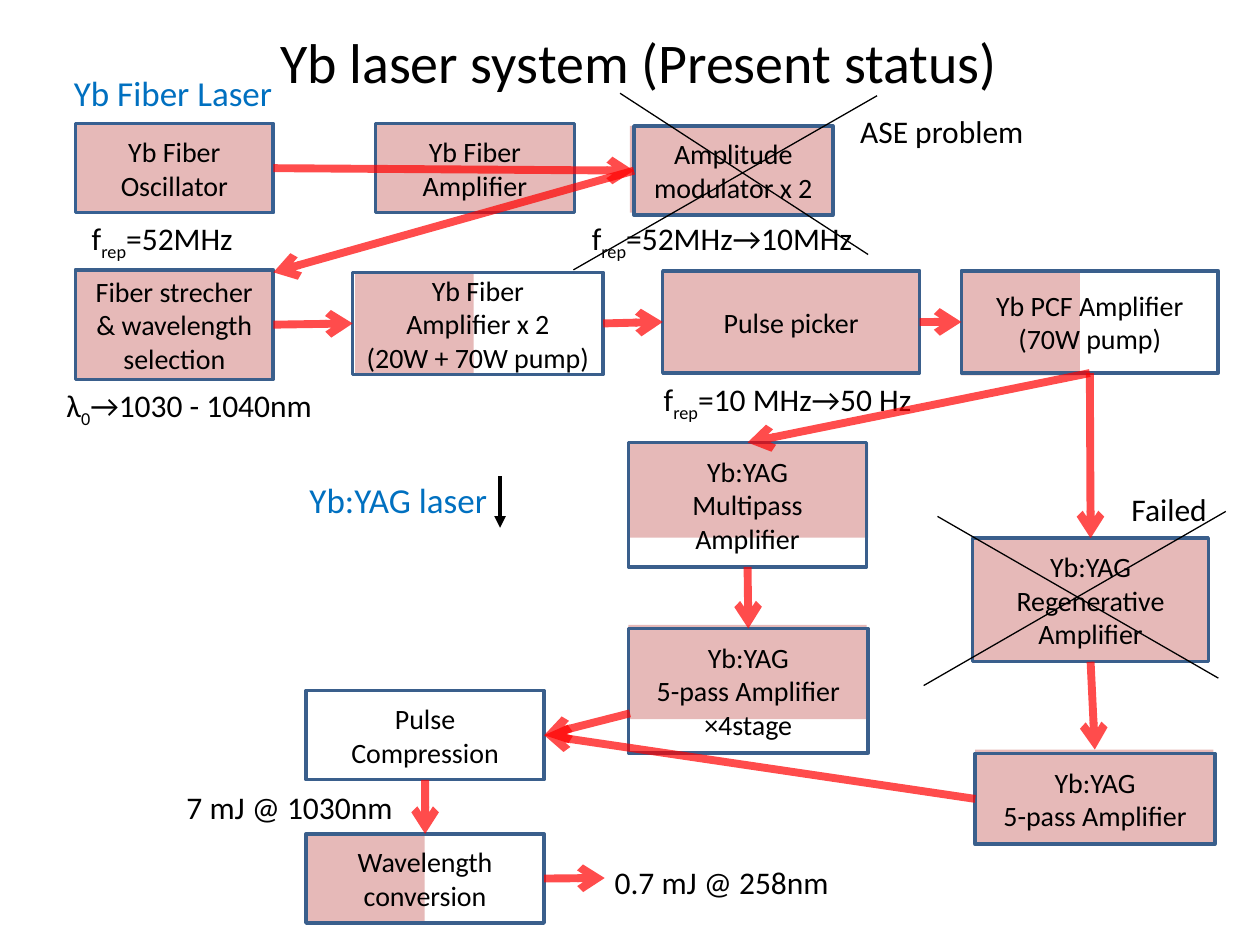
from dataclasses import dataclass

from lxml import etree
from pptx import Presentation
from pptx.dml.color import RGBColor
from pptx.enum import shapes, text
from pptx.oxml import ns
from pptx.util import Cm, Pt

FONT = "Calibri"
BLACK, BLUE, RED, PINK, OUTLINE = "000000", "0070C0", "FF0000", "E6B9B8", "3A5F8C"
TOP, LEFT, BOTTOM, RIGHT = range(4)


@dataclass(frozen=True)
class Area:
    """A place on the slide, in centimetres."""
    left: float
    top: float
    width: float
    height: float

    def lengths(self) -> tuple:
        return tuple(Cm(v) for v in (self.left, self.top, self.width, self.height))


@dataclass(frozen=True)
class Stage:
    area: Area
    lines: str
    fill: str | None = None
    outline: str = OUTLINE


@dataclass(frozen=True)
class Label:
    """A caption whose every second piece is a subscript."""
    area: Area
    pieces: tuple
    size: float = 18
    color: str = BLACK
    wrap: bool = True
    centred: bool = False


@dataclass(frozen=True)
class Pen:
    color: str
    width: float
    head: str | None = None
    opacity: int = 100


@dataclass(frozen=True)
class Link:
    """A line whose ends are (stage name, side) or a point in centimetres."""
    start: tuple
    end: tuple
    pen: Pen


BEAM = Pen(RED, 4.5, "arrow", 70)
CROSS = Pen(BLACK, 0.75)
FLOW = Pen(BLACK, 2.25, "triangle")

# Finished share of the stages that are only partly filled
PROGRESS = [
    Area(19.38, 5.46, 2.39, 2.11),
    Area(7.16, 5.49, 2.39, 2.03),
    Area(6.17, 16.81, 2.39, 1.78),
    Area(12.7, 2.54, 2.06, 1.75),
    Area(12.67, 12.6, 4.8, 1.9),
    Area(12.7, 8.94, 4.8, 1.9),
    Area(19.66, 15.11, 4.8, 1.9),
]

STAGES = {
    "oscillator": Stage(Area(1.52, 2.49, 3.99, 1.8), "Yb Fiber\nOscillator", PINK, "376092"),
    "amplifier": Stage(Area(7.57, 2.49, 4.01, 1.8), "Yb Fiber Amplifier", PINK),
    "modulator": Stage(Area(12.78, 2.54, 4.01, 1.8), "Amplitude modulator x 2", PINK),
    "stretcher": Stage(Area(1.52, 5.44, 3.99, 2.21),
                       "Fiber strecher\n& wavelength selection", PINK),
    "double amplifier": Stage(Area(7.11, 5.49, 5.05, 2.06),
                              "Yb Fiber\nAmplifier x 2\n(20W + 70W pump)"),
    "picker": Stage(Area(13.36, 5.46, 5.18, 2.06), "Pulse picker", PINK),
    "pcf": Stage(Area(19.38, 5.46, 5.18, 2.06), "Yb PCF Amplifier\n(70W pump)"),
    "multipass": Stage(Area(12.67, 8.92, 4.8, 2.51), "Yb:YAG\nMultipass\nAmplifier"),
    "regenerative": Stage(Area(19.61, 10.85, 4.75, 2.49),
                          "Yb:YAG\nRegenerative\nAmplifier", PINK),
    "four stage": Stage(Area(12.67, 12.67, 4.83, 2.51), "Yb:YAG\n5-pass Amplifier ×4stage"),
    "five pass": Stage(Area(19.66, 15.19, 4.83, 1.83), "Yb:YAG\n5-pass Amplifier"),
    "compression": Stage(Area(6.17, 13.92, 4.8, 1.8), "Pulse\nCompression"),
    "conversion": Stage(Area(6.17, 16.81, 4.8, 1.8), "Wavelength\nconversion"),
}

LABELS = [
    Label(Area(1.45, 0.33, 22.86, 1.8), ("Yb laser system (Present status)",), 32, centred=True),
    Label(Area(1.24, 1.32, 7.47, 1.12), ("Yb Fiber Laser",), 20, BLUE),
    Label(Area(5.99, 9.53, 5.84, 1.12), ("Yb:YAG laser",), 20, BLUE),
    Label(Area(1.6, 4.29, 3.71, 1.02), ("f", "rep", "=52MHz")),
    Label(Area(11.68, 4.29, 6.6, 1.02), ("f", "rep", "=52MHz→10MHz")),
    Label(Area(13.13, 7.54, 6.6, 1.02), ("f", "rep", "=10 MHz→50 Hz")),
    Label(Area(1.09, 7.65, 5.99, 1.02), ("λ", "0", "→1030 - 1040nm")),
    Label(Area(17.09, 2.13, 3.84, 1.02), ("ASE problem",), wrap=False),
    Label(Area(22.56, 9.75, 2.06, 1.02), ("Failed",), wrap=False),
    Label(Area(3.51, 15.77, 4.72, 1.02), ("7 mJ @ 1030nm",), wrap=False),
    Label(Area(12.14, 17.27, 4.88, 1.02), ("0.7 mJ @ 258nm",), wrap=False),
]

LINKS = [
    Link(("oscillator", RIGHT), ("modulator", LEFT), BEAM),
    Link(("modulator", LEFT), (5.51, 5.49), BEAM),
    Link(("stretcher", RIGHT), ("double amplifier", LEFT), BEAM),
    Link(("double amplifier", RIGHT), ("picker", LEFT), BEAM),
    Link(("picker", RIGHT), ("pcf", LEFT), BEAM),
    Link(("pcf", BOTTOM), ("regenerative", TOP), BEAM),
    Link(("pcf", BOTTOM), ("multipass", TOP), BEAM),
    Link(("multipass", BOTTOM), ("four stage", TOP), BEAM),
    Link(("regenerative", BOTTOM), (22.07, 15.11), BEAM),
    Link((12.7, 14.38), ("compression", RIGHT), BEAM),
    Link(("five pass", LEFT), ("compression", RIGHT), BEAM),
    Link(("compression", BOTTOM), ("conversion", TOP), BEAM),
    Link(("conversion", RIGHT), (12.19, 17.7), BEAM),
    Link((10.08, 9.6), (10.08, 10.64), FLOW),
    Link((17.68, 1.93), (11.56, 5.44), CROSS),
    Link((17.5, 5.13), (12.5, 1.88), CROSS),
    Link((24.71, 10.31), (18.62, 13.82), CROSS),
    Link((24.56, 13.67), (18.9, 10.41), CROSS),
]


def paint(color_format, color: str) -> None:
    color_format.rgb = RGBColor.from_string(color)


def style_font(font, size: float, color: str) -> None:
    font.name, font.size = FONT, Pt(size)
    paint(font.color, color)


def draw_rectangle(slide, area: Area, fill: str | None, outline: str | None = None):
    shape = slide.shapes.add_shape(shapes.MSO_SHAPE.RECTANGLE, *area.lengths())
    shape.shadow.inherit = False
    if fill:
        shape.fill.solid()
        paint(shape.fill.fore_color, fill)
    else:
        shape.fill.background()
    if outline:
        paint(shape.line.color, outline)
        shape.line.width = Pt(2)
    else:
        shape.line.fill.background()
    return shape


def draw_stage(slide, stage: Stage):
    shape = draw_rectangle(slide, stage.area, stage.fill, stage.outline)
    frame = shape.text_frame
    frame.text = stage.lines
    frame.word_wrap = True
    frame.vertical_anchor = text.MSO_ANCHOR.MIDDLE
    for paragraph in frame.paragraphs:
        paragraph.alignment = text.PP_ALIGN.CENTER
        for run in paragraph.runs:
            style_font(run.font, 16, BLACK)
    return shape


def draw_label(slide, label: Label) -> None:
    frame = slide.shapes.add_textbox(*label.area.lengths()).text_frame
    frame.word_wrap = label.wrap
    paragraph = frame.paragraphs[0]
    if label.centred:
        paragraph.alignment = text.PP_ALIGN.CENTER
        frame.vertical_anchor = text.MSO_ANCHOR.MIDDLE
    else:
        frame.auto_size = text.MSO_AUTO_SIZE.SHAPE_TO_FIT_TEXT
    for index, piece in enumerate(label.pieces):
        run = paragraph.add_run()
        run.text = piece
        style_font(run.font, label.size, label.color)
        if index % 2:
            run._r.get_or_add_rPr().set("baseline", "-25000")


def draw_link(slide, link: Link, stage_shapes: dict) -> None:
    points = [(0, 0) if isinstance(end[0], str) else end for end in (link.start, link.end)]
    connector = slide.shapes.add_connector(
        shapes.MSO_CONNECTOR.STRAIGHT, *(Cm(v) for point in points for v in point))
    for end, connect in ((link.start, connector.begin_connect), (link.end, connector.end_connect)):
        if isinstance(end[0], str):
            connect(stage_shapes[end[0]], end[1])
    pen = link.pen
    paint(connector.line.color, pen.color)
    connector.line.width = Pt(pen.width)
    properties = connector._element.spPr
    if pen.opacity < 100:
        color = properties.find(".//" + ns.qn("a:srgbClr"))
        etree.SubElement(color, ns.qn("a:alpha"), val=str(pen.opacity * 1000))
    if pen.head:
        etree.SubElement(properties.find(ns.qn("a:ln")), ns.qn("a:tailEnd"), type=pen.head)
    etree.SubElement(properties, ns.qn("a:effectLst"))


def main() -> None:
    presentation = Presentation()
    presentation.slide_width, presentation.slide_height = Cm(25.4), Cm(19.05)
    slide = presentation.slides.add_slide(presentation.slide_layouts[6])
    for area in PROGRESS:
        draw_rectangle(slide, area, PINK)
    stage_shapes = {name: draw_stage(slide, stage) for name, stage in STAGES.items()}
    for label in LABELS:
        draw_label(slide, label)
    for link in LINKS:
        draw_link(slide, link, stage_shapes)
    presentation.save("out.pptx")


if __name__ == "__main__":
    main()
